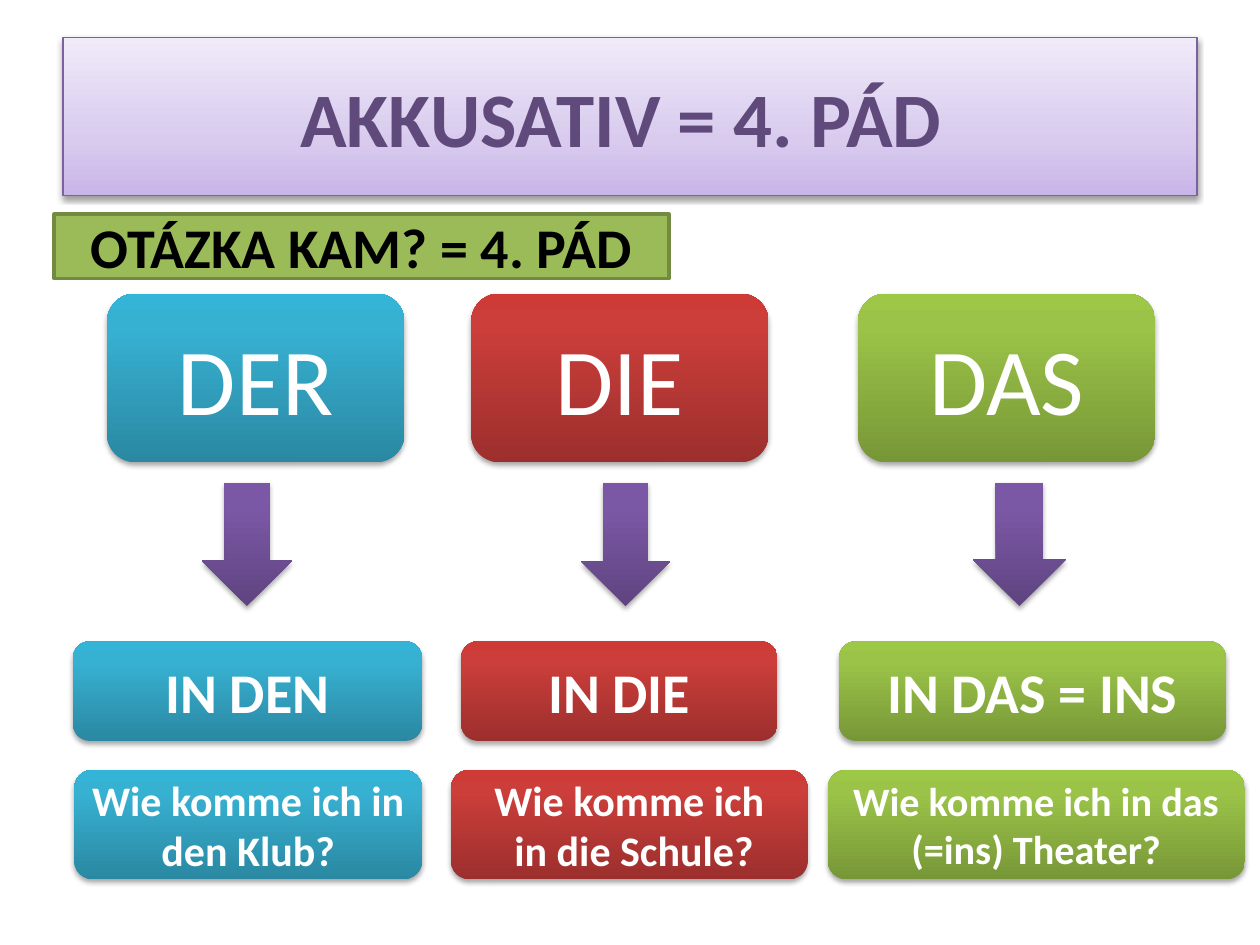
from copy import deepcopy

from pptx import Presentation
from pptx import util as u
from pptx.dml.color import RGBColor
from pptx.enum import shapes, text
from pptx.oxml import parse_xml
from pptx.oxml.ns import nsdecls, qn

WHITE = RGBColor(0xFF, 0xFF, 0xFF)
BLACK = RGBColor(0x00, 0x00, 0x00)
DARK_PURPLE = RGBColor(0x60, 0x4A, 0x7B)
PURPLE_LINE = RGBColor(0x7D, 0x60, 0xA0)
OLIVE = RGBColor(0x9B, 0xBB, 0x59)
OLIVE_LINE = RGBColor(0x73, 0x8A, 0x42)
LILAC = [RGBColor(0xC9, 0xB5, 0xE8), RGBColor(0xD8, 0xCB, 0xEE), RGBColor(0xF0, 0xEA, 0xF9)]
BLUE = [RGBColor(0x2A, 0x88, 0xA2), RGBColor(0x37, 0xB1, 0xD2), RGBColor(0x34, 0xB4, 0xD6)]
RED = [RGBColor(0x9C, 0x2F, 0x2D), RGBColor(0xCB, 0x3E, 0x3A), RGBColor(0xCE, 0x3B, 0x37)]
GREEN = [RGBColor(0x77, 0x97, 0x37), RGBColor(0x9B, 0xC3, 0x48), RGBColor(0x9D, 0xC7, 0x46)]
VIOLET = [RGBColor(0x5F, 0x44, 0x80), RGBColor(0x7B, 0x58, 0xA6), RGBColor(0x7C, 0x57, 0xA8)]


def write(shape, words, size=32, color=WHITE, bold=True):
    frame = shape.text_frame
    frame.text = words
    frame.word_wrap = True
    frame.auto_size = text.MSO_AUTO_SIZE.NONE
    frame.vertical_anchor = text.MSO_ANCHOR.MIDDLE
    for paragraph in frame.paragraphs:
        paragraph.alignment = text.PP_ALIGN.CENTER
        for run in paragraph.runs:
            run.font.name = "Calibri"
            run.font.size = u.Pt(size)
            run.font.bold = bold
            run.font.color.rgb = color


def shade(shape, colors, middle=0.8, shadow_alpha=35, shadow_distance=1.8):
    shape.fill.gradient()
    shape.fill.gradient_angle = 90
    properties = shape._element.spPr
    stop_list = properties.find(".//" + qn("a:gsLst"))
    stop_list.insert(1, deepcopy(stop_list[0]))
    for stop, position, color in zip(shape.fill.gradient_stops, (0, middle, 1), colors):
        stop.position = position
        stop.color.rgb = color
    shape.line.fill.background()
    shape.shadow.inherit = False
    properties.find(qn("a:effectLst")).append(parse_xml(
        f'<a:outerShdw {nsdecls("a")} blurRad="{u.Pt(3.1)}" dist="{u.Pt(shadow_distance)}" '
        f'dir="5400000" rotWithShape="0"><a:srgbClr val="000000">'
        f'<a:alpha val="{shadow_alpha * 1000}"/></a:srgbClr></a:outerShdw>'))


presentation = Presentation()
presentation.slide_width = u.Inches(10)
presentation.slide_height = u.Inches(7.5)
slide = presentation.slides.add_slide(presentation.slide_layouts[5])

heading = slide.shapes.title
heading.left, heading.top = u.Inches(0.5), u.Inches(0.3)
heading.width, heading.height = u.Inches(9), u.Inches(1.25)
shade(heading, LILAC, middle=0.35, shadow_alpha=38, shadow_distance=1.6)
heading.line.color.rgb = PURPLE_LINE
heading.line.width = u.Pt(0.75)
write(heading, "AKKUSATIV = 4. PÁD ", size=44, color=DARK_PURPLE)

ROUNDED = shapes.MSO_SHAPE.ROUNDED_RECTANGLE
ARROW = shapes.MSO_SHAPE.DOWN_ARROW
genders = [BLUE, RED, GREEN]
arrows = [VIOLET] * 3
rows = [
    (ROUNDED, 2.33, 1.34, genders, False,
     [(0.85, 2.36, "DER", 54), (3.74, 2.36, "DIE", 54), (6.81, 2.36, "DAS", 54)]),
    (ARROW, 3.83, 0.98, arrows, False,
     [(1.6, 0.72, "", 18), (4.61, 0.71, "", 18), (7.72, 0.74, "", 18)]),
    (ROUNDED, 5.09, 0.79, genders, True,
     [(0.58, 2.77, "IN DEN", 32), (3.66, 2.51, "IN DIE", 32), (6.66, 3.07, "IN DAS = INS", 32)]),
    (ROUNDED, 6.11, 0.87, genders, True,
     [(0.59, 2.76, "Wie komme ich in den Klub?", 24),
      (3.58, 2.83, "Wie komme ich\n in die Schule?", 24),
      (6.57, 3.31, "Wie komme ich in das\n(=ins) Theater?", 23)]),
]
for outline, top, height, palette, bold, cells in rows:
    for colors, (left, width, words, size) in zip(palette, cells):
        cell = slide.shapes.add_shape(
            outline, u.Inches(left), u.Inches(top), u.Inches(width), u.Inches(height))
        shade(cell, colors)
        if words:
            write(cell, words, size=size, bold=bold)

question = slide.shapes.add_shape(
    shapes.MSO_SHAPE.RECTANGLE, u.Inches(0.43), u.Inches(1.7), u.Inches(4.88), u.Inches(0.51))
question.fill.solid()
question.fill.fore_color.rgb = OLIVE
question.line.color.rgb = OLIVE_LINE
question.line.width = u.Pt(2)
question.shadow.inherit = False
write(question, "OTÁZKA KAM? = 4. PÁD", color=BLACK)

presentation.save("out.pptx")
